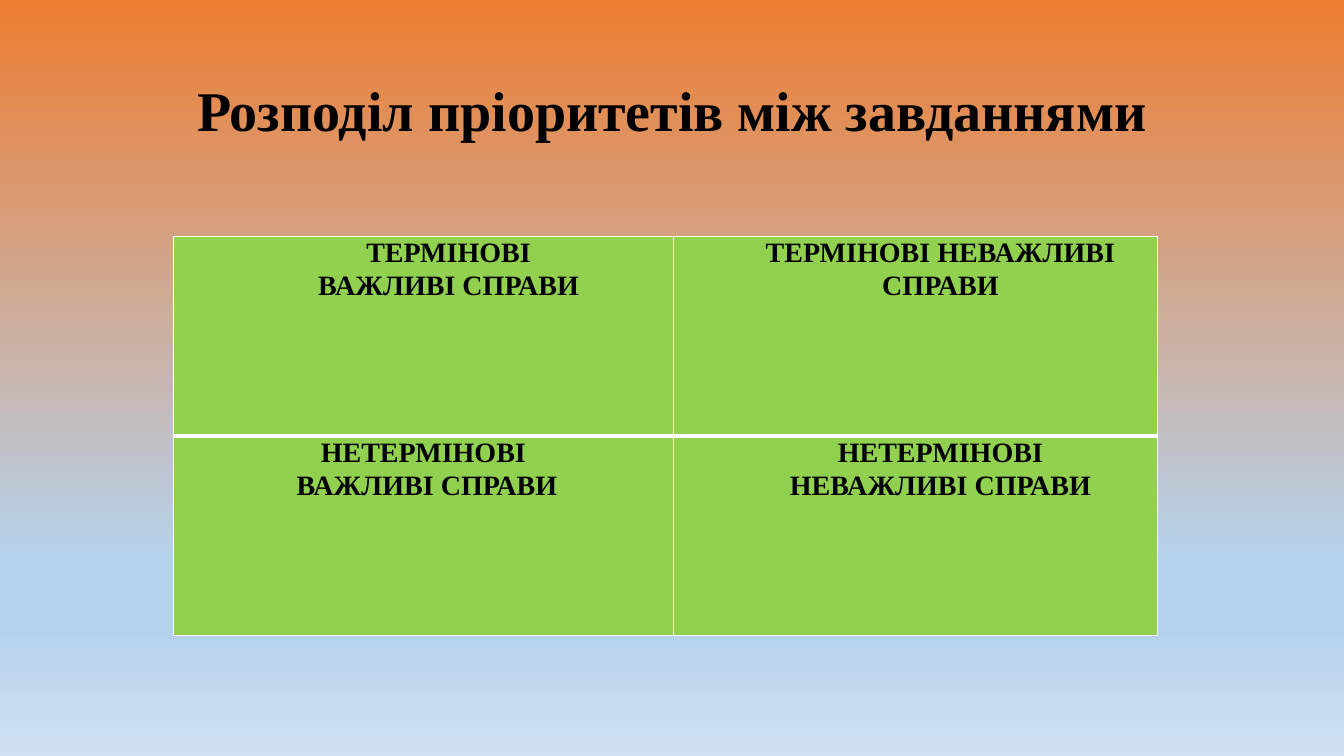
import lxml.etree
import pptx
import pptx.dml.color
import pptx.enum.text
import pptx.oxml.ns
import pptx.util

Cm = pptx.util.Cm
Pt = pptx.util.Pt
RGBColor = pptx.dml.color.RGBColor
qn = pptx.oxml.ns.qn

ORANGE = RGBColor(0xED, 0x7D, 0x31)
SKY = RGBColor(0xB5, 0xD2, 0xEC)
PALE_SKY = RGBColor(0xCE, 0xE1, 0xF2)
GREEN = RGBColor(0x92, 0xD0, 0x50)
WHITE = RGBColor(0xFF, 0xFF, 0xFF)
BLACK = RGBColor(0, 0, 0)

FONT = "Times New Roman"
BACKGROUND_STOPS = [(0, ORANGE), (74, SKY), (83, SKY), (100, PALE_SKY)]
INDENT = Cm(1.27)
QUADRANTS = [
    [
        (["ТЕРМІНОВІ", "ВАЖЛИВІ СПРАВИ"], INDENT),
        (["ТЕРМІНОВІ НЕВАЖЛИВІ СПРАВИ"], INDENT),
    ],
    [
        (["НЕТЕРМІНОВІ", " ВАЖЛИВІ СПРАВИ"], 0),
        (["НЕТЕРМІНОВІ", "НЕВАЖЛИВІ СПРАВИ"], INDENT),
    ],
]


def paint_background(slide):
    fill = slide.background.fill
    fill.gradient()
    fill.gradient_angle = 270
    stops = slide.element.find(".//" + qn("a:gsLst"))
    for stop in list(stops):
        stops.remove(stop)
    for percent, color in BACKGROUND_STOPS:
        stop = lxml.etree.SubElement(stops, qn("a:gs"), pos=str(percent * 1000))
        lxml.etree.SubElement(stop, qn("a:srgbClr"), val=str(color))


def style_paragraph(para, size, line_spacing):
    para.alignment = pptx.enum.text.PP_ALIGN.CENTER
    para.line_spacing = line_spacing
    para.font.name = FONT
    para.font.size = Pt(size)
    para.font.bold = True
    para.font.color.rgb = BLACK


def add_title(slide, left, top, width, height):
    box = slide.shapes.add_textbox(left, top, width, height)
    frame = box.text_frame
    frame.word_wrap = True
    frame.vertical_anchor = pptx.enum.text.MSO_ANCHOR.MIDDLE
    frame.text = "Розподіл пріоритетів між завданнями"
    style_paragraph(frame.paragraphs[0], 40, 0.9)


def add_borders(cell, widths):
    properties = cell._tc.get_or_add_tcPr()
    for side, width in zip("LRTB", widths):
        line = lxml.etree.SubElement(properties, qn("a:ln" + side), w=str(Pt(width)))
        fill = lxml.etree.SubElement(line, qn("a:solidFill"))
        lxml.etree.SubElement(fill, qn("a:srgbClr"), val=str(WHITE))


def fill_quadrant(cell, lines, indent, border_widths):
    add_borders(cell, border_widths)
    cell.fill.solid()
    cell.fill.fore_color.rgb = GREEN
    cell.margin_left = cell.margin_right = Cm(0.18)
    cell.margin_top = cell.margin_bottom = 0
    cell.text_frame.text = "\n".join(lines)
    for para in cell.text_frame.paragraphs:
        style_paragraph(para, 20, 1.06)
        para._p.get_or_add_pPr().set("marL", str(indent))


def add_priority_matrix(slide, left, top, width, height):
    table = slide.shapes.add_table(2, 2, left, top, width, height).table
    table.horz_banding = False
    table.columns[0].width = Cm(12.6)
    table.columns[1].width = width - Cm(12.6)
    for row_index, row in enumerate(QUADRANTS):
        border_widths = (1, 1, 1, 3) if row_index == 0 else (1, 1, 3, 1)
        for column_index, (lines, indent) in enumerate(row):
            cell = table.cell(row_index, column_index)
            fill_quadrant(cell, lines, indent, border_widths)


def main():
    deck = pptx.Presentation()
    deck.slide_width = Cm(33.87)
    deck.slide_height = Cm(19.05)
    slide = deck.slides.add_slide(deck.slide_layouts[6])
    paint_background(slide)
    add_title(slide, Cm(2.33), Cm(1.01), Cm(29.21), Cm(3.68))
    add_priority_matrix(slide, Cm(4.37), Cm(5.95), Cm(24.79), Cm(10.06))
    deck.save("out.pptx")


if __name__ == "__main__":
    main()
